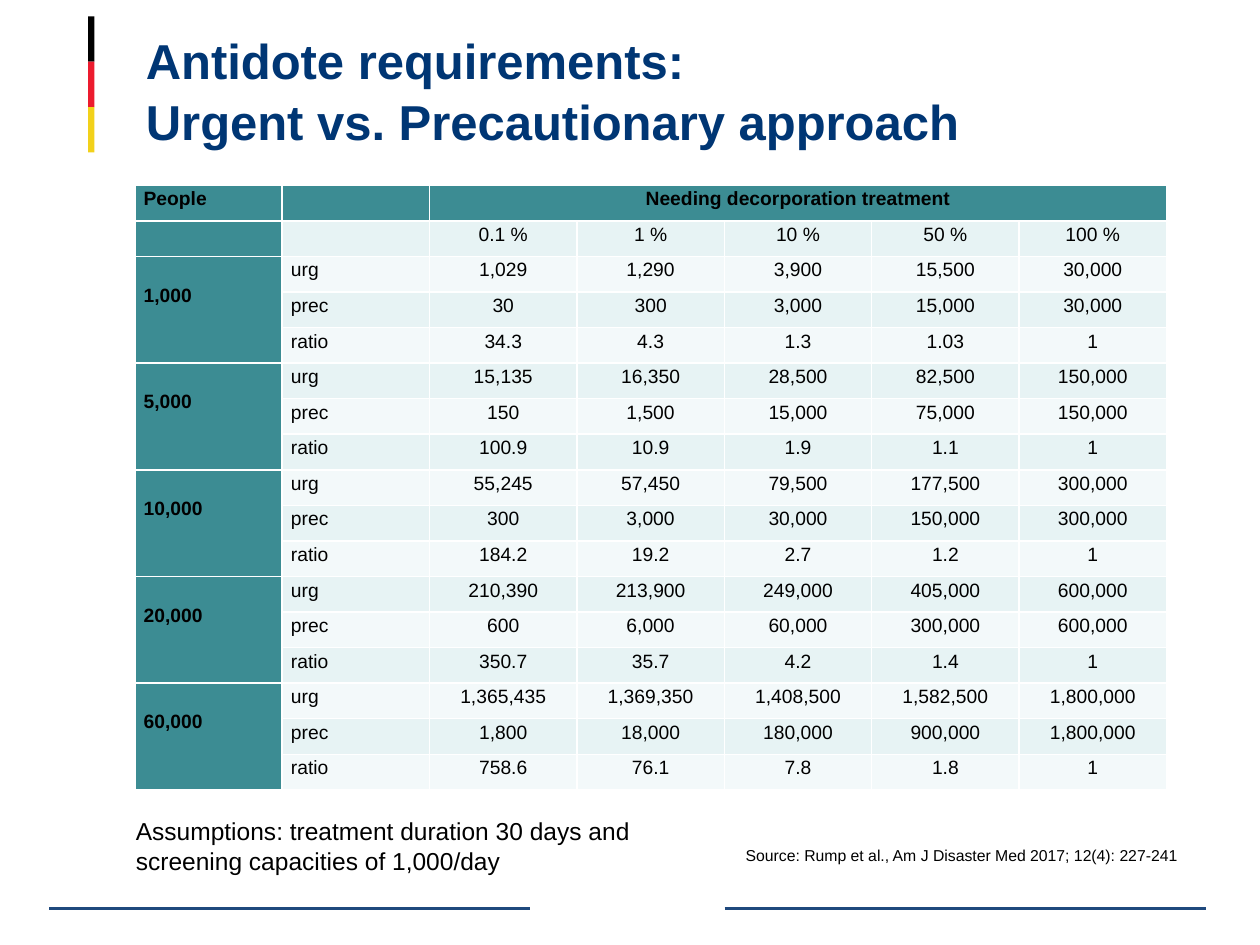
from lxml import etree
from pptx import Presentation, util as u
from pptx.dml.color import RGBColor
from pptx.enum import shapes, text
from pptx.oxml.ns import qn

COLORS = {
    "title": "003674", "text": "000000", "rule": "1F497D",
    "black": "000000", "red": "EC1B2E", "gold": "F2D11A",
    "teal": "3C8C93", "band_dark": "E7F3F4", "band_light": "F3F9FA",
}
FONT = "Arial"
ALIGN = text.PP_ALIGN
SHARES = ["0.1 %", "1 %", "10 %", "50 %", "100 %"]
APPROACHES = ["urg", "prec", "ratio"]
ANTIDOTES = {
    "1,000": ["1,029 1,290 3,900 15,500 30,000",
              "30 300 3,000 15,000 30,000",
              "34.3 4.3 1.3 1.03 1"],
    "5,000": ["15,135 16,350 28,500 82,500 150,000",
              "150 1,500 15,000 75,000 150,000",
              "100.9 10.9 1.9 1.1 1"],
    "10,000": ["55,245 57,450 79,500 177,500 300,000",
               "300 3,000 30,000 150,000 300,000",
               "184.2 19.2 2.7 1.2 1"],
    "20,000": ["210,390 213,900 249,000 405,000 600,000",
               "600 6,000 60,000 300,000 600,000",
               "350.7 35.7 4.2 1.4 1"],
    "60,000": ["1,365,435 1,369,350 1,408,500 1,582,500 1,800,000",
               "1,800 18,000 180,000 900,000 1,800,000",
               "758.6 76.1 7.8 1.8 1"],
}


def rgb(name):
    return RGBColor.from_string(COLORS[name])


def set_values(target, values):
    for name, value in values.items():
        setattr(target, name, value)


def write(paragraph, content, size, color="text", bold=False):
    paragraph.text = content
    for run in paragraph.runs:
        set_values(run.font, {"name": FONT, "size": u.Pt(size), "bold": bold})
        run.font.color.rgb = rgb(color)


def add_text(slide, box, content, size, color="text", bold=False, spacing=None, **frame):
    shape = slide.shapes.add_textbox(*map(u.Inches, box))
    set_values(shape.text_frame, {"word_wrap": True, **frame})
    paragraph = shape.text_frame.paragraphs[0]
    write(paragraph, content, size, color, bold)
    paragraph.line_spacing = spacing


def add_rule(slide, left, right, top):
    line = slide.shapes.add_connector(
        shapes.MSO_CONNECTOR.STRAIGHT, *map(u.Inches, (left, top, right, top)))
    line.line.color.rgb = rgb("rule")
    line.line.width = u.Pt(1.75)
    etree.SubElement(line._element.spPr, qn("a:effectLst"))


def add_stripe(slide, top, color):
    stripe = slide.shapes.add_shape(
        shapes.MSO_SHAPE.RECTANGLE, *map(u.Inches, (0.7, top, 0.05, 0.36)))
    stripe.shadow.inherit = False
    stripe.fill.solid()
    stripe.fill.fore_color.rgb = rgb(color)
    stripe.line.fill.background()


def fill_cell(cell, content, fill, align, bold=False, top=0):
    set_values(cell, {"margin_left": u.Inches(0.07), "margin_right": u.Inches(0.07),
                      "margin_top": u.Inches(top), "margin_bottom": 0})
    cell.fill.solid()
    cell.fill.fore_color.rgb = rgb(fill)
    paragraph = cell.text_frame.paragraphs[0]
    set_values(paragraph, {"alignment": align, "line_spacing": 1.15})
    if content:
        write(paragraph, content, 11, bold=bold)
    else:  # keeps empty cells as low as the filled ones
        etree.SubElement(paragraph._p, qn("a:endParaRPr"), sz="1100")


def table_rows():
    rows = [["People", "", "Needing decorporation treatment", "", "", "", ""],
            ["", "", *SHARES]]
    for people, lines in ANTIDOTES.items():
        for approach, line in zip(APPROACHES, lines):
            label = people if approach == APPROACHES[0] else ""
            rows.append([label, approach, *line.split()])
    return rows


def add_antidote_table(slide):
    rows = table_rows()
    frame = slide.shapes.add_table(
        len(rows), len(rows[0]), *map(u.Inches, (1.07, 1.47, 8.19, 4.8)))
    table = frame.table
    table.horz_banding = False
    for r, row in enumerate(rows):
        band = "band_light" if r % 2 == 0 else "band_dark"
        for c, content in enumerate(row):
            heading = r == 0 or c == 0
            align = (ALIGN.JUSTIFY, ALIGN.LEFT)[c] if c < 2 else ALIGN.CENTER
            # People counts sit on the second line of their merged cell
            top = 0.2 if c == 0 and r > 1 and content else 0
            fill_cell(table.cell(r, c), content, "teal" if heading else band,
                      align, heading, top)
    # Merged heading and people cells
    table.cell(0, 2).merge(table.cell(0, len(rows[0]) - 1))
    step = len(APPROACHES)
    for r in range(2, len(rows), step):
        table.cell(r, 0).merge(table.cell(r + step - 1, 0))


def main():
    presentation = Presentation()
    presentation.slide_width = u.Inches(10)
    presentation.slide_height = u.Inches(7.5)
    slide = presentation.slides.add_slide(presentation.slide_layouts[6])

    # Footer rules and flag stripes
    for left in (0.39, 5.75):
        add_rule(slide, left, left + 3.82, 7.21)
    for index, color in enumerate(("black", "red", "gold")):
        add_stripe(slide, 0.13 + 0.36 * index, color)

    # Title
    add_text(slide, (1.06, 0.36, 7.43, 0.69),
             "Antidote requirements:\vUrgent vs. Precautionary approach",
             28, "title", True, 1.05, vertical_anchor=text.MSO_ANCHOR.MIDDLE)

    add_antidote_table(slide)

    # Notes below the table
    grow = text.MSO_AUTO_SIZE.SHAPE_TO_FIT_TEXT
    add_text(slide, (0.98, 6.43, 4.8, 0.57),
             "Assumptions: treatment duration 30 days and screening capacities of 1,000/day",
             14, auto_size=grow)
    add_text(slide, (5.82, 6.66, 3.67, 0.25),
             "Source: Rump et al., Am J Disaster Med 2017; 12(4): 227-241",
             9, auto_size=grow, word_wrap=False)

    presentation.save("out.pptx")


if __name__ == "__main__":
    main()
